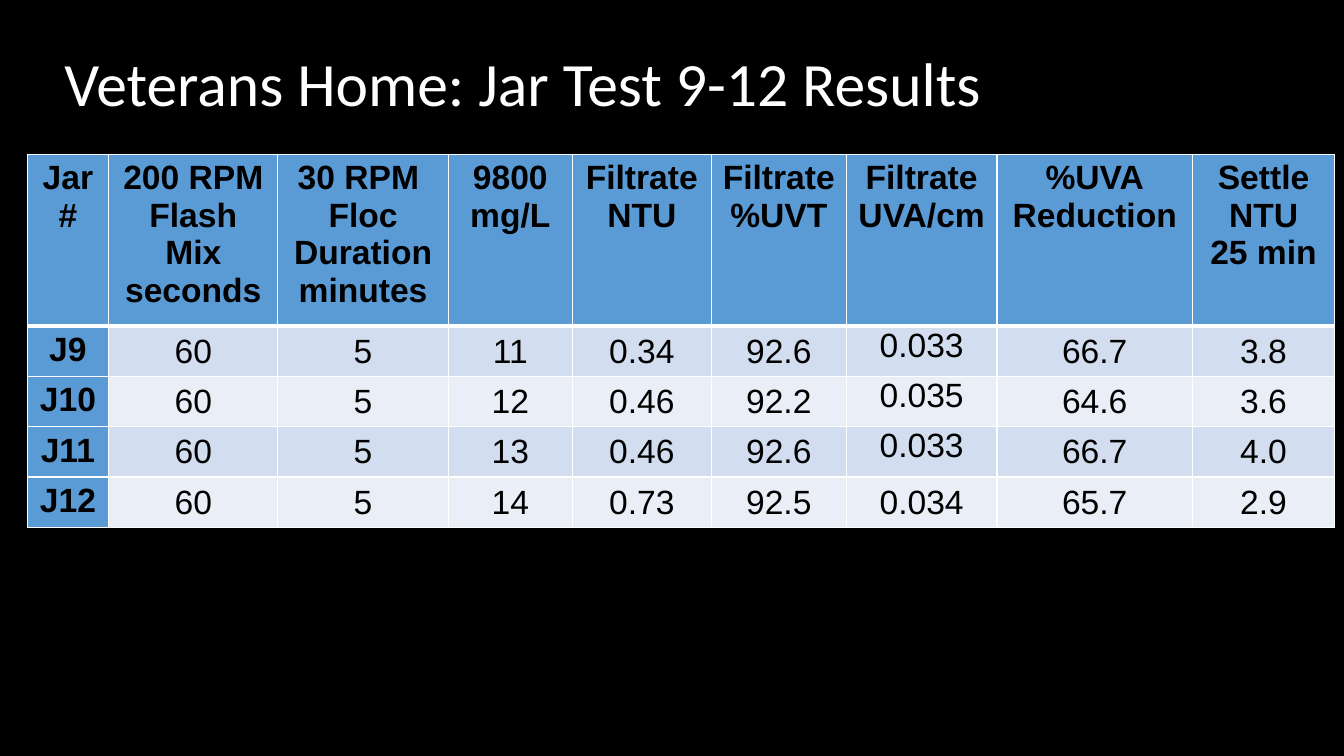
"""Build the jar test results slide with its title and table."""
import lxml.etree
import pptx
import pptx.dml.color
import pptx.enum.text
import pptx.oxml.ns
import pptx.util

Pt = pptx.util.Pt
MIDDLE = pptx.enum.text.MSO_ANCHOR.MIDDLE
TOP = pptx.enum.text.MSO_ANCHOR.TOP
LEFT = pptx.enum.text.PP_ALIGN.LEFT
CENTER = pptx.enum.text.PP_ALIGN.CENTER


def color(value):
    return pptx.dml.color.RGBColor.from_string(value)


def write_text(frame, text, font="Arial", size=24, ink="000000", bold=False, align=CENTER, spacing=None):
    for index, line in enumerate(text.split("\n")):
        paragraph = frame.add_paragraph() if index else frame.paragraphs[0]
        paragraph.alignment = align
        paragraph.line_spacing = spacing
        run = paragraph.add_run()
        run.text = line
        run.font.name = font
        run.font.size = Pt(size)
        run.font.bold = bold
        run.font.color.rgb = color(ink)


presentation = pptx.Presentation()
presentation.slide_width = Pt(960)
presentation.slide_height = Pt(540)
slide = presentation.slides.add_slide(presentation.slide_layouts[6])
slide.background.fill.solid()
slide.background.fill.fore_color.rgb = color("000000")

title = slide.shapes.add_textbox(Pt(38.9), Pt(9.4), Pt(855.4), Pt(104.4))
title.text_frame.word_wrap = True
title.text_frame.vertical_anchor = MIDDLE
write_text(title.text_frame, "Veterans Home: Jar Test 9-12 Results",
           font="Calibri", size=44, ink="FFFFFF", align=LEFT, spacing=0.9)

rows = [
    ["Jar\n#", "200 RPM\nFlash\nMix\nseconds", "30 RPM \nFloc\nDuration\nminutes", "9800\nmg/L",
     "Filtrate\nNTU", "Filtrate\n%UVT", "Filtrate\nUVA/cm", "%UVA\nReduction", "Settle\nNTU\n25 min"],
    ["J9", "60", "5", "11", "0.34", "92.6", "0.033", "66.7", "3.8"],
    ["J10", "60", "5", "12", "0.46", "92.2", "0.035", "64.6", "3.6"],
    ["J11", "60", "5", "13", "0.46", "92.6", "0.033", "66.7", "4.0"],
    ["J12", "60", "5", "14", "0.73", "92.5", "0.034", "65.7", "2.9"],
]
column_widths = [58.3, 120.8, 121.8, 88.6, 99.3, 96.4, 107.7, 139.6, 101.6]
row_heights = [114.6] + [34] * 4
uva_column = 6
last_row = len(rows) - 1

table = slide.shapes.add_table(len(rows), len(column_widths), Pt(19.4), Pt(110.2),
                               Pt(sum(column_widths)), Pt(sum(row_heights))).table
table.first_col = True
for column, width in zip(table.columns, column_widths):
    column.width = Pt(width)
for row, height in zip(table.rows, row_heights):
    row.height = Pt(height)

for row_index, values in enumerate(rows):
    for column_index, value in enumerate(values):
        cell = table.cell(row_index, column_index)
        heading = row_index == 0 or column_index == 0
        write_text(cell.text_frame, value, bold=heading)
        cell.fill.solid()
        if heading:
            cell.fill.fore_color.rgb = color("5B9BD5")
        else:
            cell.fill.fore_color.rgb = color("D2DEEF" if row_index % 2 else "EAEFF7")
            cell.margin_left = cell.margin_right = cell.margin_top = Pt(0.7)
            cell.margin_bottom = Pt(0)
            top_aligned = column_index == uva_column and row_index < last_row
            cell.vertical_anchor = TOP if top_aligned else MIDDLE

        header_edge = {0: "lnB", 1: "lnT"}.get(row_index)
        properties = cell._tc.get_or_add_tcPr()
        for position, edge in enumerate(["lnL", "lnR", "lnT", "lnB"]):
            line = lxml.etree.Element(pptx.oxml.ns.qn("a:" + edge))
            line.set("w", str(Pt(3 if edge == header_edge else 1)))
            fill = lxml.etree.SubElement(line, pptx.oxml.ns.qn("a:solidFill"))
            lxml.etree.SubElement(fill, pptx.oxml.ns.qn("a:srgbClr")).set("val", "FFFFFF")
            properties.insert(position, line)

presentation.save("out.pptx")
